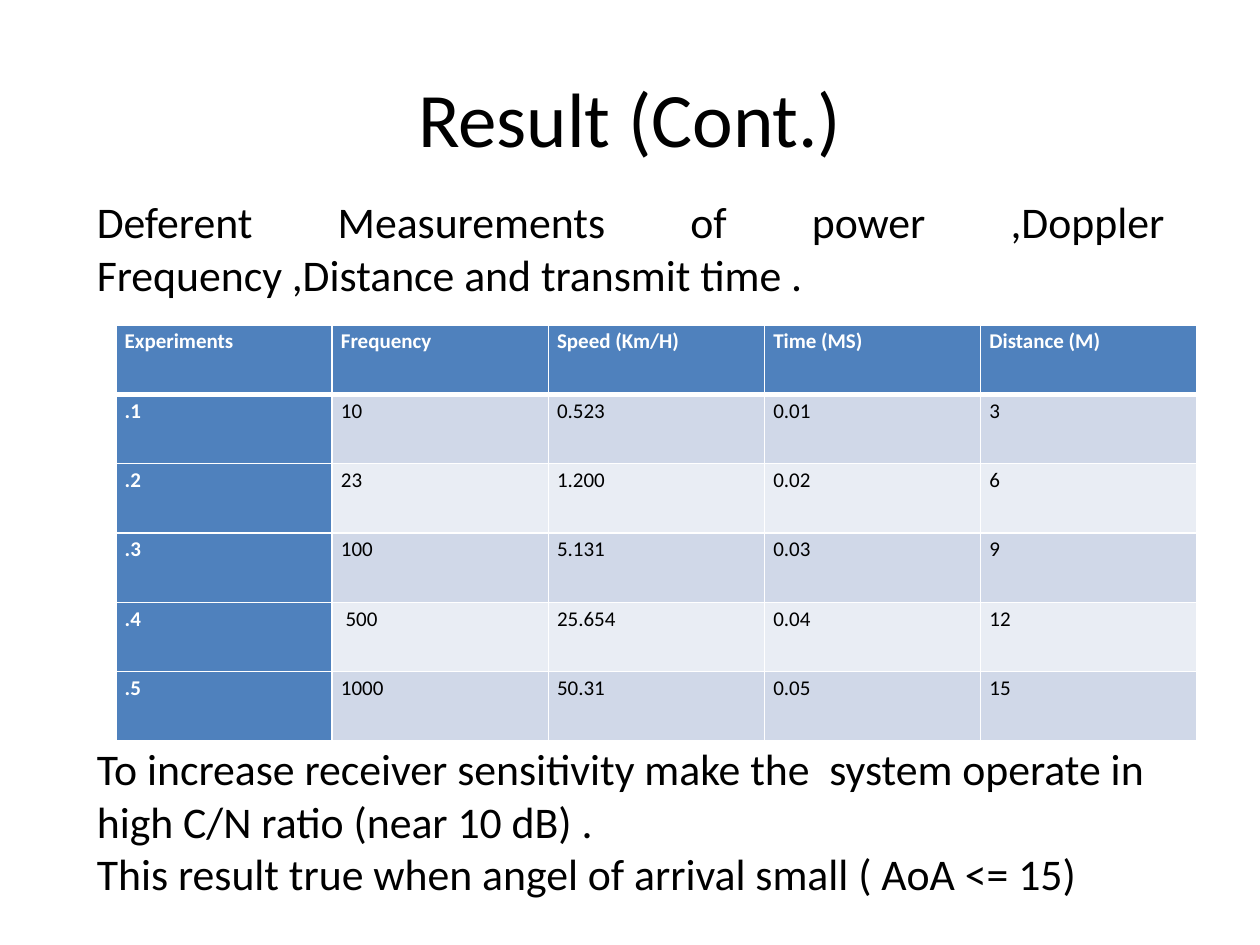
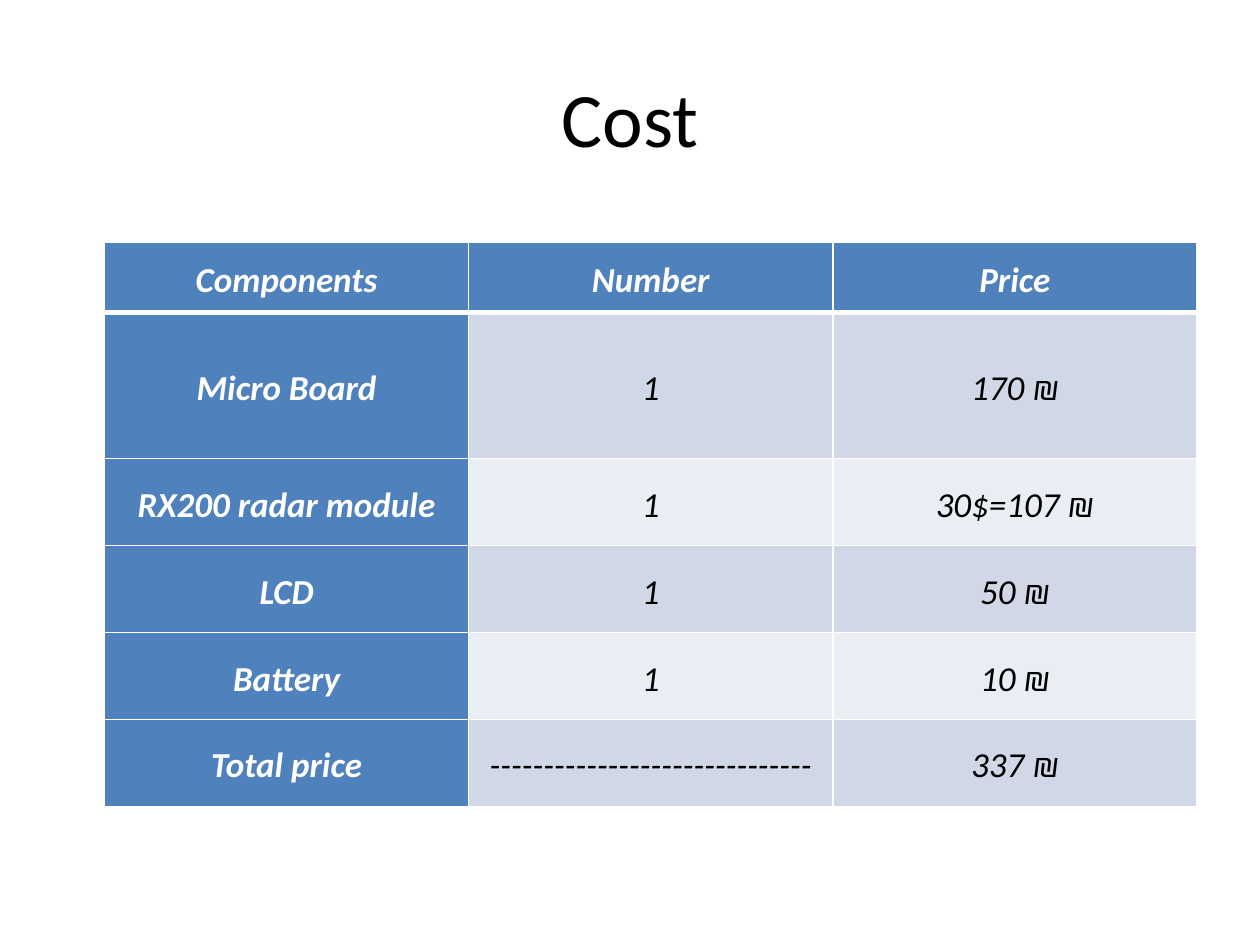
from dataclasses import dataclass

from lxml.etree import SubElement
from pptx import Presentation
from pptx.dml.color import RGBColor
from pptx.enum.text import MSO_ANCHOR as Anchor, PP_ALIGN as Align
from pptx.oxml.ns import qn
from pptx.util import Emu, Pt

PX = 9144  # EMU in one px, 100 px to the inch
FONT = "Calibri"
BLACK, WHITE, BLUE = "000000", "FFFFFF", "4F81BD"
BANDS = ("D0D8E8", "E9EDF4")


@dataclass(frozen=True)
class Frame:
    left: int
    top: int
    width: int
    height: int

    def emu(self) -> tuple[Emu, ...]:
        return tuple(px(n) for n in (self.left, self.top, self.width, self.height))


@dataclass(frozen=True)
class TextStyle:
    size: int
    align: Align = Align.LEFT
    anchor: Anchor = Anchor.TOP
    color: str = BLACK
    bold: bool = False
    italic: bool = False
    spacing: float = 1.0


@dataclass(frozen=True)
class Grid:
    frame: Frame
    row_heights: tuple[int, ...]
    rows: tuple[tuple[str, ...], ...]
    size: int
    align: Align
    anchor: Anchor
    italic: bool = False


TITLE_FRAME = Frame(50, 30, 900, 125)
TITLE_STYLE = TextStyle(44, Align.CENTER, Anchor.MIDDLE)

RESULTS = Grid(
    Frame(92, 258, 858, 330), (55,) * 6,
    (
        ("Experiments", "Frequency", "Speed (Km/H)", "Time (MS)", "Distance (M)"),
        (".1", "10", "0.523", "0.01", "3"),
        (".2", "23", "1.200", "0.02", "6"),
        (".3", "100", "5.131", "0.03", "9"),
        (".4", " 500", "25.654", "0.04", "12"),
        (".5", "1000", "50.31", "0.05", "15"),
    ),
    12, Align.JUSTIFY, Anchor.TOP,
)

COSTS = Grid(
    Frame(83, 192, 867, 448), (56, 116) + (69,) * 4,
    (
        ("Components", "Number", "Price"),
        ("Micro Board", "1", "170 ₪"),
        ("RX200 radar module", "1", "30$=107 ₪"),
        ("LCD", "1", "50 ₪"),
        ("Battery", "1", "10 ₪"),
        ("Total price", "-" * 30, "337 ₪"),
    ),
    20, Align.CENTER, Anchor.MIDDLE, italic=True,
)


def px(count: int) -> Emu:
    return Emu(count * PX)


def rgb(value: str) -> RGBColor:
    return RGBColor.from_string(value)


def write(text_frame, lines: tuple[str, ...], style: TextStyle) -> None:
    """Fill a text frame with one paragraph for each line."""
    for index, line in enumerate(lines):
        para = text_frame.add_paragraph() if index else text_frame.paragraphs[0]
        para.alignment = style.align
        para.line_spacing = style.spacing
        span = para.add_run()
        span.text = line
        span.font.name = FONT
        span.font.size = Pt(style.size)
        span.font.bold = style.bold
        span.font.italic = style.italic
        span.font.color.rgb = rgb(style.color)


def add_page(deck, title: str):
    """Add a title-only page with the shared title style."""
    page = deck.slides.add_slide(deck.slide_layouts[5])
    box = page.shapes.title
    box.left, box.top, box.width, box.height = TITLE_FRAME.emu()
    box.text_frame.vertical_anchor = TITLE_STYLE.anchor
    write(box.text_frame, (title,), TITLE_STYLE)
    return page


def add_text(page, frame: Frame, lines: tuple[str, ...], style: TextStyle) -> None:
    box = page.shapes.add_textbox(*frame.emu())
    box.text_frame.word_wrap = True
    write(box.text_frame, lines, style)


def set_borders(cell, top: int, bottom: int) -> None:
    """Give a cell white borders, widths in points."""
    properties = cell._tc.get_or_add_tcPr()
    sides = (("lnL", 1), ("lnR", 1), ("lnT", top), ("lnB", bottom))
    for index, (side, width) in enumerate(sides):
        line = SubElement(properties, qn(f"a:{side}"), w=str(Pt(width)))
        fill = SubElement(line, qn("a:solidFill"))
        SubElement(fill, qn("a:srgbClr"), val=WHITE)
        properties.insert(index, line)  # borders come before the fill


def add_grid(page, grid: Grid) -> None:
    """Add a table with a blue header row and column and banded rows."""
    columns = len(grid.rows[0])
    table = page.shapes.add_table(len(grid.rows), columns, *grid.frame.emu()).table
    table.horz_banding = False
    for column in table.columns:
        column.width = Emu(px(grid.frame.width) // columns)
    for r, (height, texts) in enumerate(zip(grid.row_heights, grid.rows)):
        table.rows[r].height = px(height)
        for c, text in enumerate(texts):
            cell = table.cell(r, c)
            header = r == 0 or c == 0
            cell.margin_left = cell.margin_right = px(7)
            cell.margin_top = cell.margin_bottom = 0
            cell.vertical_anchor = grid.anchor
            cell.fill.solid()
            cell.fill.fore_color.rgb = rgb(BLUE if header else BANDS[(r - 1) % 2])
            set_borders(cell, top=3 if r == 1 else 1, bottom=3 if r == 0 else 1)
            style = TextStyle(grid.size, grid.align, grid.anchor,
                              WHITE if header else BLACK, header, grid.italic, 1.15)
            write(cell.text_frame, (text,), style)


def main() -> None:
    deck = Presentation()
    deck.slide_width, deck.slide_height = px(1000), px(750)

    # Measurements, with remarks above and below the table
    page = add_page(deck, "Result (Cont.)")
    add_text(page, Frame(67, 584, 908, 136), (
        "To increase receiver sensitivity make the  system operate in "
        "high C/N ratio (near 10 dB) .",
        "This result true when angel of arrival small ( AoA <= 15)",
    ), TextStyle(25))
    add_text(page, Frame(67, 150, 867, 94), (
        "Deferent Measurements of power ,Doppler Frequency ,Distance "
        "and transmit time .",
    ), TextStyle(25, Align.JUSTIFY))
    add_grid(page, RESULTS)

    # Component prices
    page = add_page(deck, "Cost")
    add_grid(page, COSTS)

    deck.save("out.pptx")


if __name__ == "__main__":
    main()
